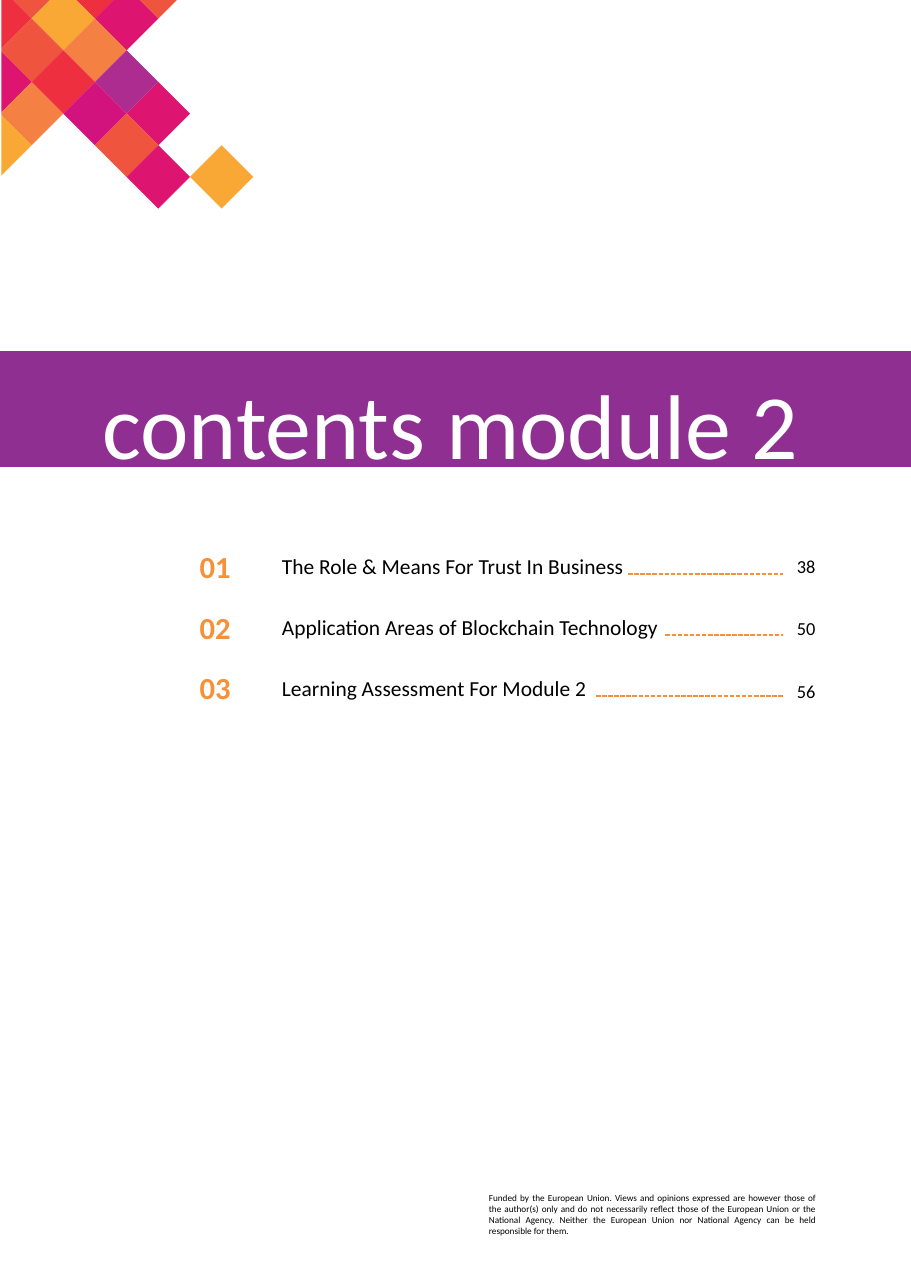
import pptx
import pptx.util
import pptx.dml.color
import pptx.enum.dml
import pptx.enum.shapes
import pptx.enum.text
import pptx.oxml

Cm = pptx.util.Cm
Pt = pptx.util.Pt
RGBColor = pptx.dml.color.RGBColor
ALIGN = pptx.enum.text.PP_ALIGN
ANCHOR = pptx.enum.text.MSO_ANCHOR

BLACK = RGBColor(0x00, 0x00, 0x00)
WHITE = RGBColor(0xFF, 0xFF, 0xFF)
PURPLE = RGBColor(0x8E, 0x2F, 0x91)
VIOLET = RGBColor(0xAC, 0x2C, 0x90)
MAGENTA = RGBColor(0xD3, 0x13, 0x7D)
PINK = RGBColor(0xDD, 0x14, 0x70)
RED = RGBColor(0xED, 0x2F, 0x40)
CORAL = RGBColor(0xEF, 0x54, 0x3F)
APRICOT = RGBColor(0xF4, 0x80, 0x43)
AMBER = RGBColor(0xF9, 0xA8, 0x35)
ORANGE = RGBColor(0xF7, 0x90, 0x37)

WIDTH, HEIGHT = 21.0, 29.7

# Mosaic tiles: column, row and colour of each diamond's centre
HALF = 0.73
MOSAIC_TOP = 0.43
MOSAIC_LEFT_EDGE = 0.03
TILES = [
    (1, -1, CORAL), (3, -1, RED), (5, -1, CORAL),
    (0, 0, RED), (2, 0, AMBER), (4, 0, PINK),
    (1, 1, CORAL), (3, 1, APRICOT),
    (0, 2, PINK), (2, 2, RED), (4, 2, VIOLET),
    (1, 3, APRICOT), (3, 3, MAGENTA), (5, 3, PINK),
    (0, 4, AMBER), (4, 4, CORAL),
    (5, 5, PINK), (7, 5, AMBER),
]

# Heading, page number and start of the dashed leader
CHAPTERS = [
    ("The Role & Means For Trust In Business", "38", 14.48),
    ("Application Areas of Blockchain Technology", "50", 15.34),
    ("Learning Assessment For Module 2", "56", 13.74),
]
LEADER_END = 18.04

FUNDING = (
    "Funded by the European Union. Views and opinions expressed are however "
    "those of the author(s) only and do not necessarily reflect those of the "
    "European Union or the National Agency. Neither the European Union nor "
    "National Agency can be held responsible for them."
)


def clip(points, axis, limit):
    """Cut away the part of a polygon that lies below limit on one axis."""
    kept = []
    for a, b in zip(points, points[1:] + points[:1]):
        if a[axis] >= limit:
            kept.append(a)
        if (a[axis] < limit) != (b[axis] < limit):
            t = (limit - a[axis]) / (b[axis] - a[axis])
            kept.append(tuple(p + t * (q - p) for p, q in zip(a, b)))
    return kept


class Page:
    """The current slide and its style; all lengths are in centimetres."""

    font = "Calibri"

    def __init__(self, slide):
        self.shapes = slide.shapes

    def paint(self, sp, color):
        sp.shadow.inherit = False
        sp.fill.solid()
        sp.fill.fore_color.rgb = color
        sp.line.fill.background()

    def band(self, x, y, w, h, color):
        sp = self.shapes.add_shape(
            pptx.enum.shapes.MSO_SHAPE.RECTANGLE, Cm(x), Cm(y), Cm(w), Cm(h))
        self.paint(sp, color)

    def tile(self, col, row, color):
        x, y = col * HALF, MOSAIC_TOP + row * HALF
        diamond = [(x, y - HALF), (x + HALF, y), (x, y + HALF), (x - HALF, y)]
        outline = clip(clip(diamond, 0, MOSAIC_LEFT_EDGE), 1, 0)
        points = [(Cm(px), Cm(py)) for px, py in outline]
        builder = self.shapes.build_freeform(*points[0])
        builder.add_line_segments(points[1:], close=True)
        self.paint(builder.convert_to_shape(), color)

    def text(self, x, y, w, h, text, size, color=BLACK, bold=False,
             align=ALIGN.LEFT, anchor=ANCHOR.MIDDLE):
        tf = self.shapes.add_textbox(Cm(x), Cm(y), Cm(w), Cm(h)).text_frame
        tf.word_wrap = True
        tf.vertical_anchor = anchor
        tf.text = text
        p = tf.paragraphs[0]
        p.alignment = align
        font = p.runs[0].font
        font.name = self.font
        font.size = Pt(size)
        font.bold = bold
        font.color.rgb = color

    def leader(self, x1, x2, y):
        line = self.shapes.add_connector(
            pptx.enum.shapes.MSO_CONNECTOR.STRAIGHT, Cm(x1), Cm(y), Cm(x2), Cm(y))
        line.line.color.rgb = ORANGE
        line.line.width = Pt(1)
        line.line.dash_style = pptx.enum.dml.MSO_LINE.SQUARE_DOT
        ns = pptx.oxml.ns.nsdecls("a")
        line._element.spPr.append(pptx.oxml.parse_xml(f"<a:effectLst {ns}/>"))


def main():
    prs = pptx.Presentation()
    prs.slide_width, prs.slide_height = Cm(WIDTH), Cm(HEIGHT)
    page = Page(prs.slides.add_slide(prs.slide_layouts[6]))

    page.band(0, 8.1, WIDTH, 2.67, PURPLE)
    for col, row, color in TILES:
        page.tile(col, row, color)
    page.text(11.02, 27.36, 8.03, 1.27, FUNDING, 6,
              align=ALIGN.JUSTIFY, anchor=ANCHOR.TOP)

    for i, (heading, number, leader_start) in enumerate(CHAPTERS):
        y = 12.57 + 1.4 * i
        page.text(4.06, y, 1.8, 0.97, f"{i + 1:02}", 20, ORANGE, True, ALIGN.CENTER)
        page.text(6.25, y, 11.05, 0.97, heading, 14)
        page.text(17.78, 12.57 + 1.44 * i, 1.27, 0.97, number, 12, align=ALIGN.RIGHT)
        page.leader(leader_start, LEADER_END, 13.23 + 1.41 * i)

    page.text(2.11, 8.36, 17.78, 2.69, "contents module 2", 60, WHITE,
              anchor=ANCHOR.TOP)
    prs.save("out.pptx")


if __name__ == "__main__":
    main()
